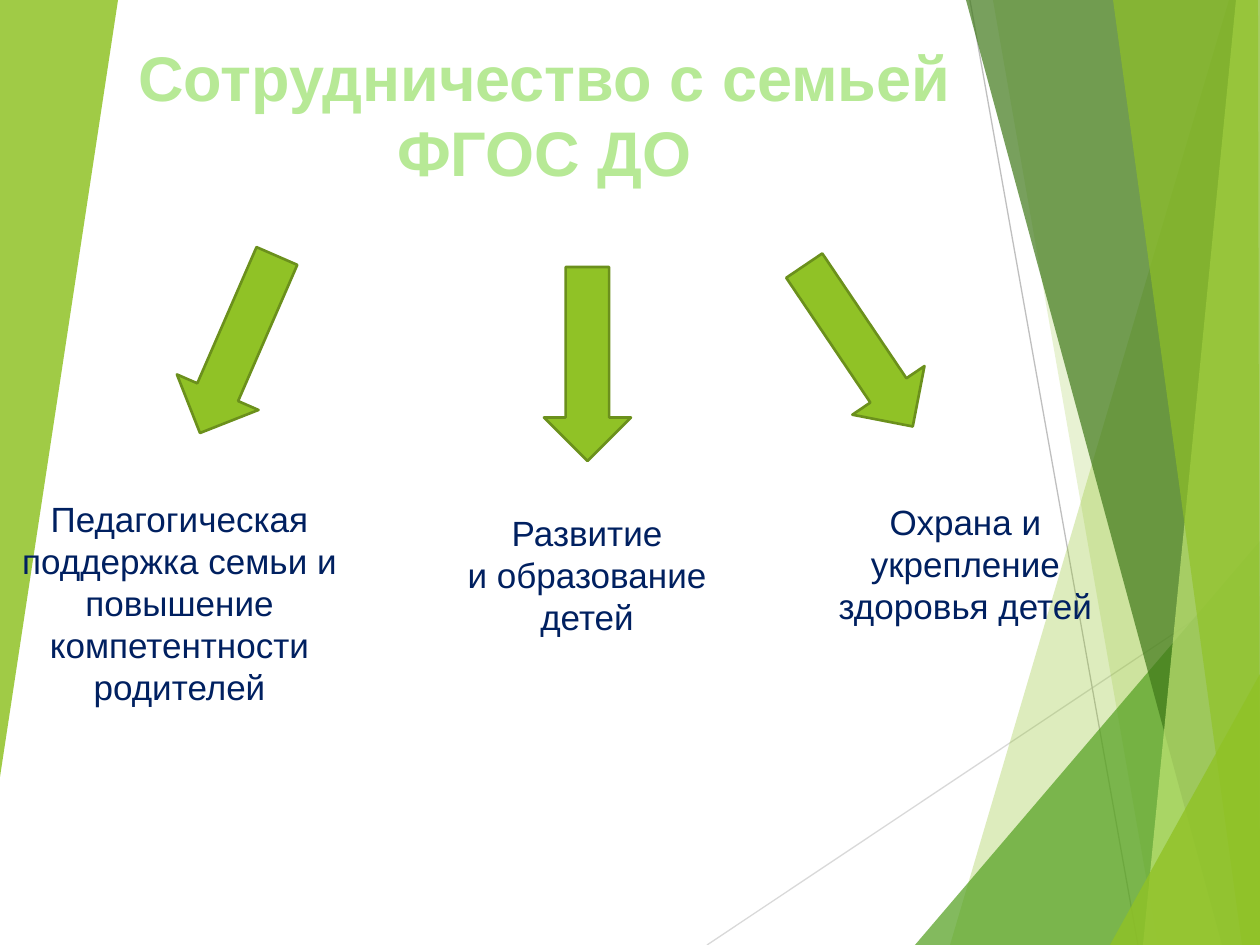
import pptx
import pptx.dml.color
import pptx.enum.shapes
import pptx.enum.text
import pptx.oxml.ns
import pptx.util
from lxml import etree

RGBColor = pptx.dml.color.RGBColor
LIME = RGBColor(0x90, 0xC2, 0x26)
PALE_LIME = RGBColor(0xC0, 0xE4, 0x74)
GREEN = RGBColor(0x54, 0xA0, 0x21)
FOREST = RGBColor(0x3F, 0x78, 0x19)
OLIVE = RGBColor(0x6B, 0x90, 0x1C)
MINT = RGBColor(0xB7, 0xE9, 0x96)
NAVY = RGBColor(0x00, 0x20, 0x60)
GREY = RGBColor(0xBF, 0xBF, 0xBF)
LIGHT_GREY = RGBColor(0xD9, 0xD9, 0xD9)

PX = 914400 / 126
WIDTH, HEIGHT = 1260, 945
FONT = "Arial"

RAYS = [
    ((707, 945), (1260, 576), LIGHT_GREY),
    ((970, 0), (1138, 945), GREY),
]
FACETS = [
    ([(1229, 0), (950, 945), (1260, 945), (1260, 0)], LIME, 30),
    ([(993, 0), (1158, 945), (1260, 945), (1260, 0)], LIME, 20),
    ([(915, 945), (1260, 541), (1260, 945)], GREEN, 72),
    ([(966, 0), (1222, 945), (1260, 945), (1260, 0)], FOREST, 70),
    ([(1236, 0), (1143, 945), (1260, 945), (1260, 0)], PALE_LIME, 70),
    ([(1113, 0), (1242, 945), (1260, 945), (1258, 0)], LIME, 65),
    ([(1110, 945), (1260, 674), (1260, 945)], LIME, 80),
    ([(0, 0), (118, 0), (0, 777)], LIME, 85),
]
DIRECTIONS = [
    ((194, 248, 89, 193), 23.5, (-37, 491, 433, 224),
     ["Педагогическая поддержка семьи и повышение компетентности родителей"]),
    ((544, 267, 87, 194), 0, (407, 505, 360, 140),
     ["Развитие", "и образование детей"]),
    ((815, 249, 87, 194), 326, (788, 494, 355, 140),
     ["Охрана и укрепление здоровья детей"]),
]


def emu(*lengths):
    """Turn px lengths into EMU."""
    return [round(length * PX) for length in lengths]


def qualified(tag):
    """Return the full XML name of a prefixed tag."""
    return pptx.oxml.ns.qn(tag)


def add_ray(page, start, end, color):
    """Draw one thin straight line."""
    ray = page.shapes.add_connector(
        pptx.enum.shapes.MSO_CONNECTOR.STRAIGHT, *emu(*start, *end))
    ray.line.color.rgb = color
    ray.line.width = pptx.util.Pt(0.75)
    etree.SubElement(ray._element.spPr, qualified("a:effectLst"))


def add_facet(page, points, color, opacity):
    """Draw one translucent polygon."""
    builder = page.shapes.build_freeform(*points[0], scale=PX)
    builder.add_line_segments(points[1:], close=True)
    facet = builder.convert_to_shape()
    facet.shadow.inherit = False
    facet.fill.solid()
    facet.fill.fore_color.rgb = color
    facet.line.fill.background()
    tint = facet._element.spPr.find(".//" + qualified("a:srgbClr"))
    etree.SubElement(tint, qualified("a:alpha"), val=str(opacity * 1000))


def add_backdrop(page):
    """Lay the rays and facets that frame the slide."""
    for ray in RAYS:
        add_ray(page, *ray)
    for facet in FACETS:
        add_facet(page, *facet)


def write_lines(shape, lines, size, color, bold=False):
    """Fill a shape with centred paragraphs and return their runs."""
    frame = shape.text_frame
    frame.word_wrap = True
    frame.auto_size = pptx.enum.text.MSO_AUTO_SIZE.NONE
    frame.vertical_anchor = pptx.enum.text.MSO_ANCHOR.TOP
    spans = []
    for index, line in enumerate(lines):
        para = frame.add_paragraph() if index else frame.paragraphs[0]
        para.alignment = pptx.enum.text.PP_ALIGN.CENTER
        span = para.add_run()
        span.text = line
        span.font.name = FONT
        span.font.size = pptx.util.Pt(size)
        span.font.bold = bold
        span.font.color.rgb = color
        spans.append(span)
    return spans


def add_title(page, box):
    """Place the outlined title in front of the backdrop."""
    title = page.shapes.title
    title.left, title.top, title.width, title.height = emu(*box)
    title.element.getparent().append(title.element)
    lines = ["Сотрудничество с семьей", "ФГОС ДО"]
    for span in write_lines(title, lines, 36, MINT, bold=True):
        outline = etree.Element(
            qualified("a:ln"), w=str(pptx.util.Pt(1.75)))
        fill = etree.SubElement(outline, qualified("a:solidFill"))
        etree.SubElement(fill, qualified("a:srgbClr"), val=str(GREEN))
        span.font._element.insert(0, outline)


def add_arrow(page, box, rotation):
    """Place one block arrow leading down from the title."""
    arrow = page.shapes.add_shape(
        pptx.enum.shapes.MSO_SHAPE.DOWN_ARROW, *emu(*box))
    arrow.rotation = rotation
    arrow.shadow.inherit = False
    arrow.fill.solid()
    arrow.fill.fore_color.rgb = LIME
    arrow.line.color.rgb = OLIVE
    arrow.line.width = pptx.util.Pt(1.5)


def add_caption(page, box, lines):
    """Place the text under an arrow."""
    write_lines(page.shapes.add_textbox(*emu(*box)), lines, 20, NAVY)


def main():
    """Build and save the deck."""
    deck = pptx.Presentation()
    deck.slide_width, deck.slide_height = emu(WIDTH, HEIGHT)
    page = deck.slides.add_slide(deck.slide_layouts.get_by_name("Title Only"))
    add_backdrop(page)
    add_title(page, (0, 32, 1089, 165))
    for arrow_box, rotation, caption_box, lines in DIRECTIONS:
        add_arrow(page, arrow_box, rotation)
        add_caption(page, caption_box, lines)
    deck.save("out.pptx")


if __name__ == "__main__":
    main()
